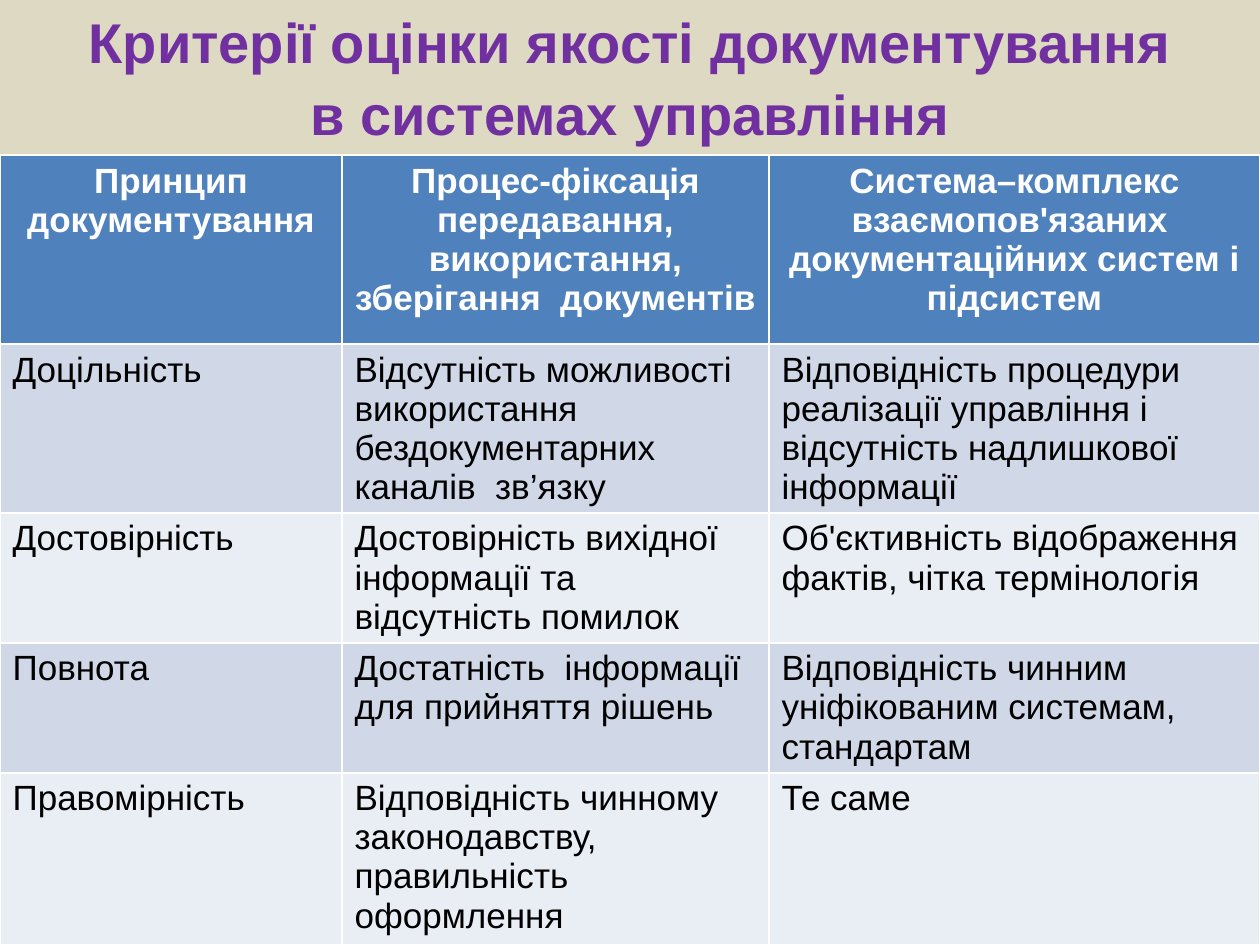
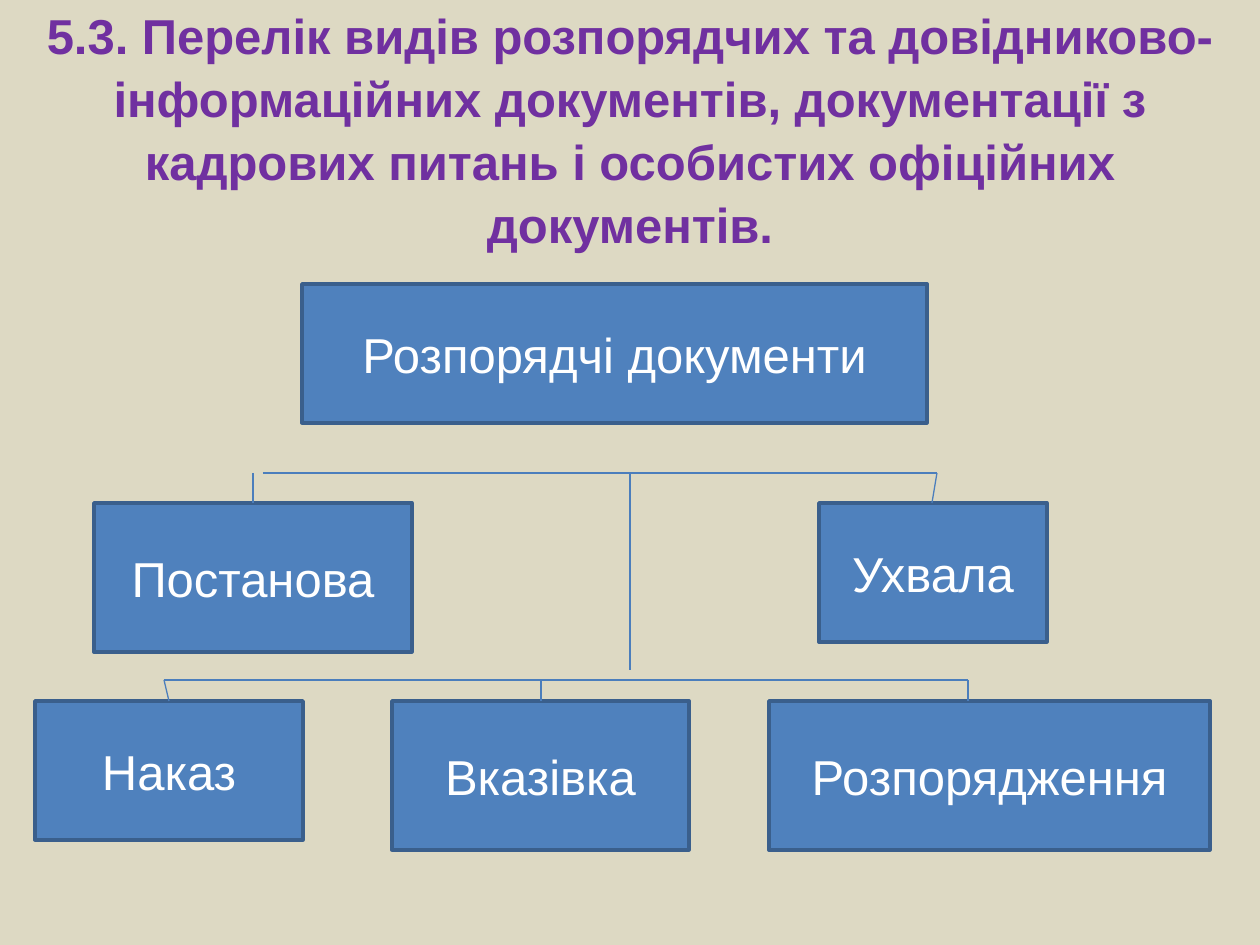
import pptx
import pptx.util
import pptx.dml.color
import pptx.enum.shapes
import pptx.enum.text
import pptx.oxml.ns
import lxml.etree

FONT = "Arial"
SAND, PURPLE, BLUE, BLUE_EDGE, BLUE_LINE = "DDD9C3", "7030A0", "4F81BD", "3A5F8C", "4B7EBC"
WHITE, BLACK = "FFFFFF", "000000"
BANDS = ["E9EDF4", "D0D8E8"]
MIDDLE = pptx.enum.text.MSO_ANCHOR.MIDDLE
CENTER, LEFT = pptx.enum.text.PP_ALIGN.CENTER, pptx.enum.text.PP_ALIGN.LEFT


def emu(*lengths):
    """Turn px (126 to the inch) into EMU."""
    return [pptx.util.Emu(round(n * 914400 / 126)) for n in lengths]


def write(tf, text, size, color, bold=False, align=CENTER):
    """Fill a text frame with one formatted paragraph."""
    tf.word_wrap = True
    tf.text = text
    p = tf.paragraphs[0]
    p.alignment = align
    p.font.name, p.font.size, p.font.bold = FONT, pptx.util.Pt(size), bold
    p.font.color.rgb = pptx.dml.color.RGBColor.from_string(color)
    return p


prs = pptx.Presentation()
prs.slide_width, prs.slide_height = emu(1260, 945)
bg = prs.slide_master.background.fill
bg.solid()
bg.fore_color.rgb = pptx.dml.color.RGBColor.from_string(SAND)

# Slides with their titles
titles = [
    ("Критерії оцінки якості документування\vв системах управління",
     32, (30, 0, 1200, 149)),
    ("5.3. Перелік видів розпорядчих та довідниково-\vінформаційних документів, "
     "документації з кадрових питань і особистих офіційних документів.",
     28, (0, 0, 1260, 255)),
]
for text, size, place in titles:
    s = prs.slides.add_slide(prs.slide_layouts[5])
    title = s.shapes.title
    title.left, title.top, title.width, title.height = emu(*place)
    p = write(title.text_frame, text, size, PURPLE, bold=True)
    p.line_spacing = 1.07
    title.text_frame.vertical_anchor = MIDDLE
    title.text_frame.auto_size = pptx.enum.text.MSO_AUTO_SIZE.NONE
criteria_slide, documents_slide = prs.slides

# Table of criteria
rows = [
    ("Принцип документування",
     "Процес-фіксація передавання, використання, зберігання  документів",
     "Система–комплекс взаємопов'язаних  документаційних систем і підсистем"),
    ("Доцільність",
     "Відсутність можливості використання бездокументарних каналів  зв’язку",
     "Відповідність процедури реалізації управління і відсутність надлишкової інформації"),
    ("Достовірність",
     "Достовірність вихідної інформації та відсутність помилок",
     "Об'єктивність відображення фактів, чітка термінологія"),
    ("Повнота",
     "Достатність  інформації для прийняття рішень",
     "Відповідність чинним уніфікованим системам, стандартам"),
    ("Правомірність",
     "Відповідність чинному законодавству, правильність оформлення",
     "Те саме"),
]
col_widths = emu(342, 427, 491)
row_heights = emu(189, 169, 130, 130, 172)
table = criteria_slide.shapes.add_table(len(rows), 3, *emu(0, 155, 1260, 790)).table
for col, width in zip(table.columns, col_widths):
    col.width = width
for i, (texts, height) in enumerate(zip(rows, row_heights)):
    table.rows[i].height = height
    header = i == 0
    for cell, text in zip(table.rows[i].cells, texts):
        cell.fill.solid()
        cell.fill.fore_color.rgb = pptx.dml.color.RGBColor.from_string(
            BLUE if header else BANDS[i % 2])
        write(cell.text_frame, text, 20, WHITE if header else BLACK,
              bold=header, align=CENTER if header else LEFT)

# Boxes of administrative documents
boxes = [
    ("Розпорядчі документи", 302, 284, 625, 139),
    ("Постанова", 94, 503, 318, 149),
    ("Наказ", 35, 701, 268, 139),
    ("Ухвала", 819, 503, 228, 139),
    ("Розпорядження", 769, 701, 441, 149),
    ("Вказівка", 392, 701, 297, 149),
]
for text, *place in boxes:
    sp = documents_slide.shapes.add_shape(
        pptx.enum.shapes.MSO_SHAPE.RECTANGLE, *emu(*place))
    sp.shadow.inherit = False
    sp.fill.solid()
    sp.fill.fore_color.rgb = pptx.dml.color.RGBColor.from_string(BLUE)
    sp.line.color.rgb = pptx.dml.color.RGBColor.from_string(BLUE_EDGE)
    sp.line.width = pptx.util.Pt(2)
    write(sp.text_frame, text, 28, WHITE)
    sp.text_frame.vertical_anchor = MIDDLE

# Branch lines: upper level, trunk, lower level
UPPER, LOWER = 473, 680
lines = [
    (263, UPPER, 937, UPPER),
    (253, UPPER, 253, 503),
    (932, 503, 937, UPPER),
    (630, UPPER, 630, 670),
    (164, LOWER, 968, LOWER),
    (164, LOWER, 169, 701),
    (968, LOWER, 968, 701),
    (541, LOWER, 541, 701),
]
for ends in lines:
    line = documents_slide.shapes.add_connector(
        pptx.enum.shapes.MSO_CONNECTOR.STRAIGHT, *emu(*ends))
    line.line.color.rgb = pptx.dml.color.RGBColor.from_string(BLUE_LINE)
    line.line.width = pptx.util.Pt(0.75)
    lxml.etree.SubElement(line._element.spPr, pptx.oxml.ns.qn("a:effectLst"))

prs.save("out.pptx")
